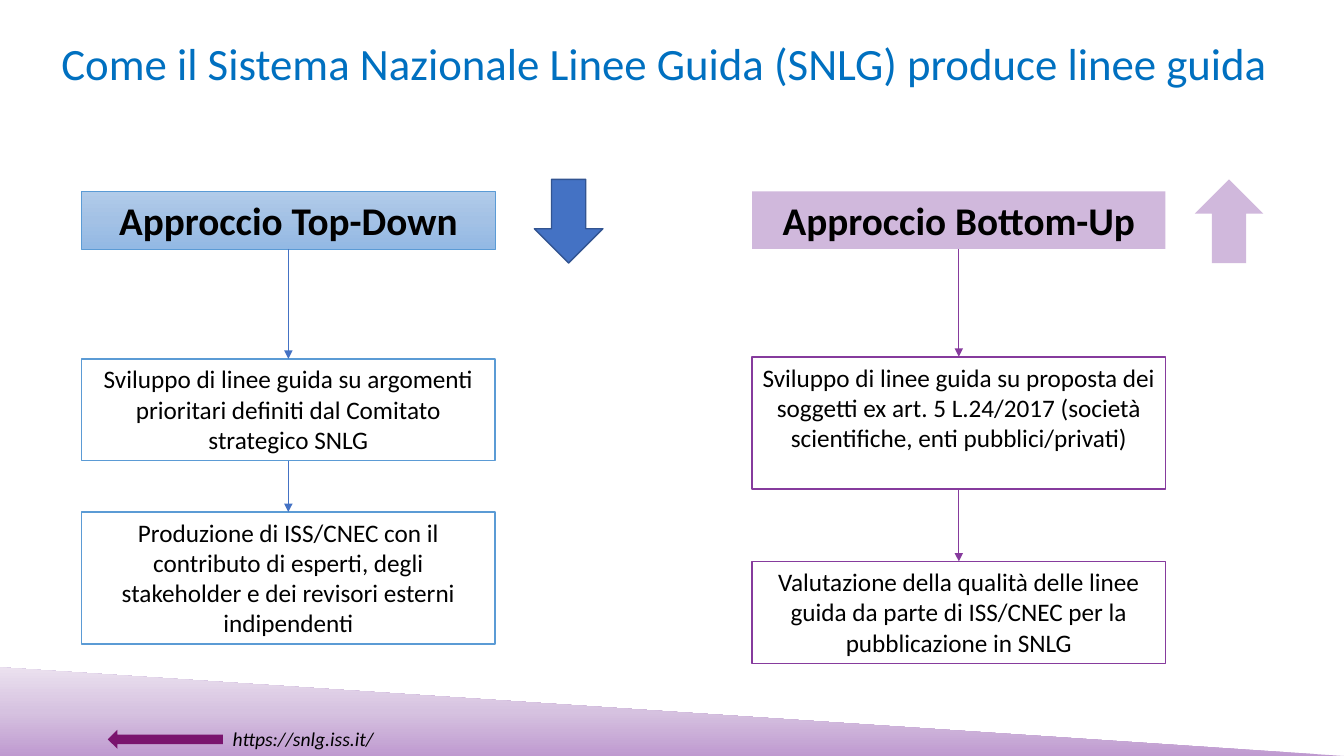
from copy import deepcopy
from pptx import Presentation, util as u
from pptx.dml import color
from pptx.enum import shapes, text
from pptx.oxml import ns, xmlchemy

WIDTH, HEIGHT = 13.33, 7.5
SHAPE = shapes.MSO_SHAPE

THEME = {
    "font": "Calibri",
    "title": {"size": 32, "color": "0070C0"},
    "heading": {"size": 28, "color": "000000", "bold": True},
    "body": {"size": 18, "color": "000000"},
    "link": {"size": 14, "color": "000000", "italic": True},
    "white": "FFFFFF",
    "footer_arrow": "7A146E",
    "footer_gradient": ("BF9AD0", "D6C2E0", "EBE1EF"),
    "blue_gradient": ("B1CBE9", "A3C1E5", "93B9E4"),
    "blue": "4472C4", "light_blue": "5B9BD5", "dark_blue": "325491",
    "purple": "863B9D", "lilac": "D0B8DC",
}

TITLE = "Come il Sistema Nazionale Linee Guida (SNLG) produce linee guida"
LINK = "https://snlg.iss.it/"
APPROACHES = [
    {
        "heading": "Approccio Top-Down", "left": 0.81,
        "fill": THEME["blue_gradient"], "heading_line": (THEME["light_blue"], 0.5),
        "box_line": THEME["light_blue"], "connector": THEME["blue"],
        "arrow": {"left": 5.3, "fill": THEME["blue"],
                  "line": (THEME["dark_blue"], 1), "rotation": 0},
        "steps": [
            (3.56, 1.01, "Sviluppo di linee guida su argomenti prioritari definiti "
                         "dal Comitato strategico SNLG"),
            (5.08, 1.31, "Produzione di ISS/CNEC con il contributo di esperti, degli "
                         "stakeholder e dei revisori esterni indipendenti"),
        ],
    },
    {
        "heading": "Approccio Bottom-Up", "left": 7.46,
        "fill": THEME["lilac"], "heading_line": None,
        "box_line": THEME["purple"], "connector": THEME["purple"],
        "arrow": {"left": 11.85, "fill": THEME["lilac"],
                  "line": None, "rotation": 180},
        "steps": [
            (3.54, 1.31, "Sviluppo di linee guida su proposta dei soggetti ex art. 5 "
                         "L.24/2017 (società scientifiche, enti pubblici/privati)"),
            (5.57, 1.01, "Valutazione della qualità delle linee guida da parte di "
                         "ISS/CNEC per la pubblicazione in SNLG"),
        ],
    },
]
BOX_WIDTH, HEADING_TOP, HEADING_HEIGHT = 4.1, 1.9, 0.57
ARROW_TOP, ARROW_WIDTH, ARROW_HEIGHT = 1.78, 0.68, 0.83
FOOTER_HEIGHT = 0.88


def rgb(value):
    return color.RGBColor.from_string(value)


def inches(*values):
    return [u.Inches(value) for value in values]


def paint_gradient(shape, colors, angle):
    shape.fill.gradient()
    shape.fill.gradient_angle = angle
    stop_list = shape._element.spPr.find(".//" + ns.qn("a:gsLst"))
    stop_list.insert(1, deepcopy(stop_list[0]))
    for index, (stop, value) in enumerate(zip(shape.fill.gradient_stops, colors)):
        stop.position = index / (len(colors) - 1)
        stop.color.rgb = rgb(value)


def add_shape(page, kind, at, fill, line=None, angle=270, rotation=0):
    shape = page.shapes.add_shape(kind, *inches(*at))
    shape.shadow.inherit = False
    shape.rotation = rotation
    if isinstance(fill, tuple):
        paint_gradient(shape, fill, angle)
    else:
        shape.fill.solid()
        shape.fill.fore_color.rgb = rgb(fill)
    if line:
        shape.line.color.rgb = rgb(line[0])
        shape.line.width = u.Pt(line[1])
    else:
        shape.line.fill.background()
    return shape


def write(shape, words, style, align=text.PP_ALIGN.LEFT,
          anchor=text.MSO_ANCHOR.TOP, spacing=1.0):
    frame = shape.text_frame
    frame.word_wrap = True
    frame.vertical_anchor = anchor
    para = frame.paragraphs[0]
    para.alignment = align
    para.line_spacing = spacing
    span = para.add_run()
    span.text = words
    span.font.name = THEME["font"]
    span.font.size = u.Pt(style["size"])
    span.font.color.rgb = rgb(style["color"])
    for name in ("bold", "italic"):
        setattr(span.font, name, style.get(name, False))


def add_arrow_line(page, x, top, bottom, value):
    line = page.shapes.add_connector(shapes.MSO_CONNECTOR.STRAIGHT,
                                     *inches(x, top, x, bottom))
    line.line.color.rgb = rgb(value)
    line.line.width = u.Pt(0.5)
    head = xmlchemy.OxmlElement("a:tailEnd")
    head.set("type", "triangle")
    line.line._get_or_add_ln().append(head)
    line._element.spPr.append(xmlchemy.OxmlElement("a:effectLst"))


def add_footer(page):
    add_shape(page, SHAPE.RIGHT_TRIANGLE,
              (0, HEIGHT - FOOTER_HEIGHT, WIDTH, FOOTER_HEIGHT),
              THEME["footer_gradient"], angle=90)
    write(page.shapes.add_textbox(*inches(2.21, 7.16, 2.96, 0.34)), LINK, THEME["link"])
    add_shape(page, SHAPE.RIGHT_ARROW, (1.07, 7.24, 1.14, 0.19),
              THEME["footer_arrow"], rotation=180)


def add_approach(page, approach):
    left, center = approach["left"], text.PP_ALIGN.CENTER
    heading = add_shape(page, SHAPE.RECTANGLE,
                        (left, HEADING_TOP, BOX_WIDTH, HEADING_HEIGHT),
                        approach["fill"], approach["heading_line"])
    write(heading, approach["heading"], THEME["heading"], center)
    arrow = approach["arrow"]
    add_shape(page, SHAPE.DOWN_ARROW,
              (arrow["left"], ARROW_TOP, ARROW_WIDTH, ARROW_HEIGHT),
              arrow["fill"], arrow["line"], rotation=arrow["rotation"])
    bottom = HEADING_TOP + HEADING_HEIGHT
    for top, height, words in approach["steps"]:
        box = add_shape(page, SHAPE.RECTANGLE, (left, top, BOX_WIDTH, height),
                        THEME["white"], (approach["box_line"], 1))
        write(box, words, THEME["body"], center)
        add_arrow_line(page, left + BOX_WIDTH / 2, bottom, top, approach["connector"])
        bottom = top + height


def main():
    deck = Presentation()
    deck.slide_width, deck.slide_height = inches(WIDTH, HEIGHT)
    page = deck.slides.add_slide(deck.slide_layouts[6])
    add_footer(page)
    write(page.shapes.add_textbox(*inches(0.51, 0.22, 12.49, 0.87)), TITLE,
          THEME["title"], anchor=text.MSO_ANCHOR.MIDDLE, spacing=0.9)
    for approach in APPROACHES:
        add_approach(page, approach)
    deck.save("out.pptx")


if __name__ == "__main__":
    main()
